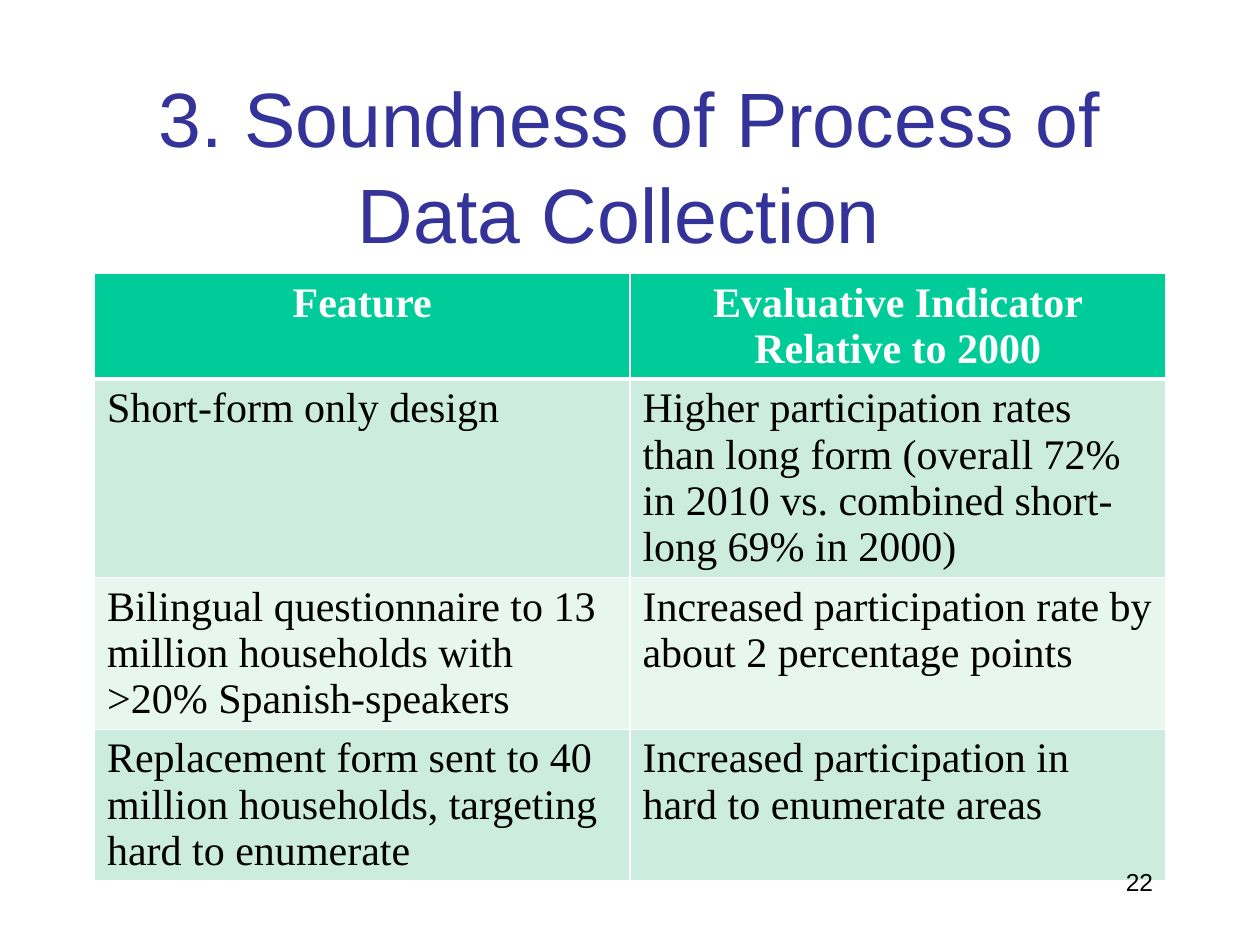
from pptx import Presentation
from pptx.dml.color import RGBColor
from pptx.enum.text import MSO_ANCHOR, MSO_AUTO_SIZE, PP_ALIGN
from pptx.oxml import parse_xml
from pptx.oxml.ns import nsdecls
from pptx.util import Emu, Pt

PX = 9144  # 100 px to the inch
COLORS = {
    "title": "333399", "text": "000000", "white": "FFFFFF",
    "header": "00CC99", "band_dark": "CCECDE", "band_light": "E7F6EF",
}
TITLE = {"name": "Arial", "size": Pt(44), "bold": False}
HEADER = {"name": "Times New Roman", "size": Pt(24), "bold": True}
BODY = {**HEADER, "bold": False}
NUMBER = {"name": "Arial", "size": Pt(14), "bold": False}

ROWS = [
    ("Feature", "Evaluative Indicator Relative to 2000"),
    ("Short-form only design",
     "Higher participation rates than long form "
     "(overall 72% in 2010 vs. combined short-long 69% in 2000)"),
    ("Bilingual questionnaire to 13 million households with >20% Spanish-speakers",
     "Increased participation rate by about 2 percentage points"),
    ("Replacement form sent to 40 million households, targeting hard to enumerate",
     "Increased participation in hard to enumerate areas"),
]


def emu(*lengths):
    return [Emu(n * PX) for n in lengths]


def rgb(key):
    return RGBColor.from_string(COLORS[key])


def write(tf, text, font, color, align):
    tf.word_wrap = True
    p = tf.paragraphs[0]
    p.alignment = align
    r = p.add_run()
    r.text = text
    for name, value in font.items():
        setattr(r.font, name, value)
    r.font.color.rgb = rgb(color)
    return p


def add_title(slide, box):
    sp = slide.shapes.title
    sp.left, sp.top, sp.width, sp.height = emu(*box)
    tf = sp.text_frame
    tf.auto_size = MSO_AUTO_SIZE.NONE
    tf.vertical_anchor = MSO_ANCHOR.MIDDLE
    p = write(tf, "3. Soundness of Process of Data Collection ",
              TITLE, "title", PP_ALIGN.CENTER)
    p.line_spacing = 1.04


def set_borders(cell, widths):
    """Draw white lines; widths maps a side (L, R, T, B) to points."""
    tc_pr = cell._tc.get_or_add_tcPr()
    for side, width in widths.items():
        tc_pr.append(parse_xml(
            f'<a:ln{side} {nsdecls("a")} w="{Pt(width)}"><a:solidFill>'
            f'<a:srgbClr val="{COLORS["white"]}"/></a:solidFill></a:ln{side}>'))


def add_indicator_table(slide, box, row_heights):
    frame = slide.shapes.add_table(len(ROWS), len(ROWS[0]), *emu(*box))
    table = frame.table
    for i, (row, height) in enumerate(zip(table.rows, row_heights)):
        row.height = emu(height)[0]
        if i == 0:
            font, color, fill, align = HEADER, "white", "header", PP_ALIGN.CENTER
            borders = {"L": 1, "R": 1, "T": 1, "B": 3}
        else:
            font, color, align = BODY, "text", PP_ALIGN.LEFT
            fill = "band_dark" if i % 2 else "band_light"
            borders = {"L": 1, "R": 1, "T": 1, "B": 1}
            if i == 1:
                del borders["T"]  # the header's thick rule lies here
        for cell, text in zip(row.cells, ROWS[i]):
            set_borders(cell, borders)
            cell.fill.solid()
            cell.fill.fore_color.rgb = rgb(fill)
            write(cell.text_frame, text, font, color, align)
    frame.height = emu(box[3])[0]


def add_page_number(slide, box):
    sp = slide.shapes.add_textbox(*emu(*box))
    write(sp.text_frame, "22", NUMBER, "text", PP_ALIGN.RIGHT)


def main():
    prs = Presentation()
    prs.slide_width, prs.slide_height = emu(1000, 750)
    slide = prs.slides.add_slide(prs.slide_layouts[5])
    slide.background.fill.solid()
    slide.background.fill.fore_color.rgb = rgb("white")
    add_title(slide, (75, 67, 850, 125))
    add_indicator_table(slide, (75, 217, 850, 370), (41, 43, 43, 43))
    add_page_number(slide, (717, 683, 208, 50))
    prs.save("out.pptx")


if __name__ == "__main__":
    main()
